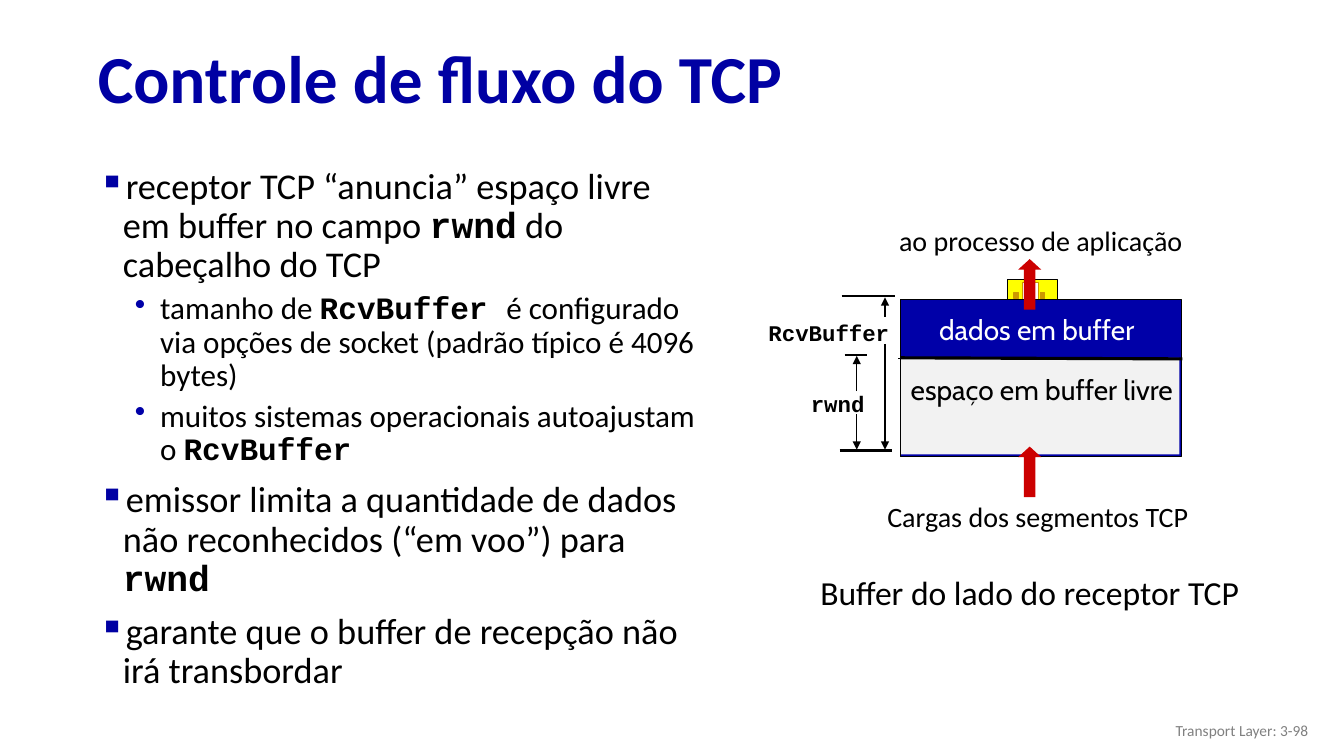
from dataclasses import dataclass

from lxml import etree
from pptx import Presentation
from pptx.dml.color import RGBColor
from pptx.enum.shapes import MSO_CONNECTOR, MSO_SHAPE
from pptx.enum.text import MSO_ANCHOR, PP_ALIGN
from pptx.oxml.ns import qn
from pptx.util import Inches, Pt

RECT, UP_ARROW = MSO_SHAPE.RECTANGLE, MSO_SHAPE.UP_ARROW
STRAIGHT = MSO_CONNECTOR.STRAIGHT
LEFT, CENTER, RIGHT = PP_ALIGN.LEFT, PP_ALIGN.CENTER, PP_ALIGN.RIGHT
TOP, MIDDLE = MSO_ANCHOR.TOP, MSO_ANCHOR.MIDDLE

WIDTH, HEIGHT = Inches(13.33), Inches(7.5)


@dataclass(frozen=True)
class Theme:
    """Colours, fonts and type sizes of the slide."""
    navy: str = "0000A3"
    blue: str = "0000A8"
    black: str = "000000"
    white: str = "FFFFFF"
    pale: str = "F2F2F2"
    yellow: str = "FFFF00"
    gold: str = "CC9900"
    red: str = "CC0000"
    grey: str = "808080"
    sans: str = "Calibri"
    round: str = "Cabin"
    code: str = "Courier New"
    title: float = 48
    point: float = 25.9
    detail: float = 22.2
    caption: float = 24
    label: float = 20
    measure: float = 16
    footer: float = 11


THEME = Theme()
LEVELS = (
    {"size": THEME.point, "margin": 0.39, "indent": -0.24, "before": 10,
     "bullet": "▪", "color": THEME.navy},
    {"size": THEME.detail, "margin": 0.76, "indent": -0.25, "before": 5,
     "bullet": "•", "color": THEME.blue},
)
POINTS = (
    (0, ("receptor TCP “anuncia” espaço livre em buffer no campo ", "rwnd",
         " do cabeçalho do TCP")),
    (1, ("tamanho de ", "RcvBuffer ",
         "é configurado via opções de socket (padrão típico é 4096 bytes)")),
    (1, ("muitos sistemas operacionais autoajustam o ", "RcvBuffer")),
    (0, ("emissor limita a quantidade de dados não reconhecidos (“em voo”) para ",
         "rwnd")),
    (0, ("garante que o buffer de recepção não irá transbordar",)),
)


def across(share):
    """Return a length from a percentage of the slide's width."""
    return round(WIDTH * share / 100)


def down(share):
    """Return a length from a percentage of the slide's height."""
    return round(HEIGHT * share / 100)


def area(left, top, width, height):
    """Return a rectangle given in percentages as slide lengths."""
    return across(left), down(top), across(width), down(height)


def apply(target, values):
    """Set every attribute named in values."""
    for name, value in values.items():
        setattr(target, name, value)


def add_span(para, text, size, color=THEME.black, font=THEME.sans, bold=False):
    """Add a formatted run to a paragraph."""
    span = para.add_run()
    span.text = text
    apply(span.font, {"size": Pt(size), "name": font, "bold": bold})
    span.font.color.rgb = RGBColor.from_string(color)


def add_label(page, place, text, size, align=CENTER, anchor=TOP, wrap=False, **style):
    """Add a one-paragraph text box."""
    frame = page.shapes.add_textbox(*area(*place)).text_frame
    apply(frame, {"word_wrap": wrap, "vertical_anchor": anchor})
    para = frame.paragraphs[0]
    para.alignment = align
    add_span(para, text, size, **style)


def add_block(page, kind, place, fill, line=None):
    """Add a filled preset shape with an optional thin outline."""
    block = page.shapes.add_shape(kind, *area(*place))
    block.shadow.inherit = False
    block.fill.solid()
    block.fill.fore_color.rgb = RGBColor.from_string(fill)
    if line:
        block.line.color.rgb = RGBColor.from_string(line)
        block.line.width = Pt(0.75)
    else:
        block.line.fill.background()
    return block


def add_rule(page, start, end, width=0.75, arrow=False):
    """Add a black straight line, with an optional arrowhead at its end."""
    rule = page.shapes.add_connector(
        STRAIGHT, across(start[0]), down(start[1]), across(end[0]), down(end[1]))
    rule.line.color.rgb = RGBColor.from_string(THEME.black)
    rule.line.width = Pt(width)
    if arrow:
        etree.SubElement(rule.line._get_or_add_ln(), qn("a:tailEnd"), type="triangle")
    etree.SubElement(rule._element.spPr, qn("a:effectLst"))


def set_bullet(para, level):
    """Give a paragraph its bullet and hanging indent."""
    props = para._p.get_or_add_pPr()
    props.set("marL", str(Inches(level["margin"])))
    props.set("indent", str(Inches(level["indent"])))
    color = etree.SubElement(props, qn("a:buClr"))
    etree.SubElement(color, qn("a:srgbClr"), val=level["color"])
    etree.SubElement(props, qn("a:buChar"), char=level["bullet"])


def add_title(page, text):
    """Place and format the title placeholder."""
    title = page.shapes.title
    apply(title, dict(zip(("left", "top", "width", "height"),
                          area(6.53, 4.27, 93.4, 13.07))))
    apply(title.text_frame, {"word_wrap": True, "vertical_anchor": MIDDLE})
    para = title.text_frame.paragraphs[0]
    apply(para, {"alignment": LEFT, "line_spacing": 0.9})
    add_span(para, text, THEME.title, THEME.navy, bold=True)


def add_points(page, points):
    """Add the bulleted text, setting every second run as code."""
    frame = page.shapes.add_textbox(*area(5.48, 21.6, 47.78, 71.6)).text_frame
    frame.word_wrap = True
    for index, (depth, texts) in enumerate(points):
        para = frame.add_paragraph() if index else frame.paragraphs[0]
        level = LEVELS[depth]
        apply(para, {"level": depth, "line_spacing": 0.9,
                     "space_before": Pt(level["before"])})
        set_bullet(para, level)
        for order, text in enumerate(texts):
            is_code = order % 2 == 1
            add_span(para, text, level["size"], bold=is_code,
                     font=THEME.code if is_code else THEME.sans)


def add_buffer(page):
    """Draw the receive buffer with its process and data arrows."""
    add_block(page, RECT, (74.93, 36.93, 3.75, 3.07), THEME.yellow, THEME.black)
    add_block(page, RECT, (76.05, 37.33, 1.2, 2.27), THEME.white, THEME.gold)
    for left in (75.45, 77.4):
        add_block(page, RECT, (left, 38.67, 0.3, 0.8), THEME.gold, THEME.gold)
    add_block(page, RECT, (66.98, 39.6, 20.93, 20.8), THEME.blue, THEME.black)
    add_block(page, RECT, (67.05, 47.33, 20.7, 12.8), THEME.pale)
    for top in (34.27, 59.07):
        arrow = add_block(page, UP_ARROW, (75.75, top, 1.73, 6.67), THEME.red)
        arrow.adjustments[1] = 0.459
    add_rule(page, (66.83, 47.47), (87.98, 47.47))
    add_rule(page, (66.98, 47.33), (87.98, 47.47), 2.25)
    add_label(page, (68.78, 40.67, 16.73, 5.87), "dados em buffer", THEME.label,
              color=THEME.white, font=THEME.round)
    add_label(page, (66.98, 48.67, 21.08, 10.27), "espaço em buffer livre",
              THEME.label, wrap=True, font=THEME.round)


def add_measures(page):
    """Draw the dimension lines of the whole buffer and its free part."""
    for left, right, row in ((62.63, 66.6, 39.2), (62.85, 64.5, 46.93),
                             (62.48, 66.38, 59.6)):
        add_rule(page, (left, row), (right, row), 1.5)
    for column, start, end in ((63.75, 51.73, 47.07), (63.75, 54.8, 59.47),
                               (65.85, 41.87, 39.33), (65.85, 45.47, 59.47)):
        add_rule(page, (column, start), (column, end), arrow=True)
    for place, text, align in (((59.55, 50.93, 5.55, 4.93), "rwnd", CENTER),
                               ((56.4, 41.6, 10.5, 4.93), "RcvBuffer", RIGHT)):
        add_label(page, place, text, THEME.measure, align, font=THEME.code, bold=True)


def main():
    """Build and save the slide."""
    deck = Presentation()
    apply(deck, {"slide_width": WIDTH, "slide_height": HEIGHT})
    page = deck.slides.add_slide(deck.slide_layouts[5])
    add_title(page, "Controle de fluxo do TCP")
    add_points(page, POINTS)
    add_buffer(page)
    add_measures(page)
    add_label(page, (65.1, 65.47, 24.23, 5.33), "Cargas dos segmentos TCP", THEME.label)
    add_label(page, (66, 28.93, 22.88, 5.33), "ao processo de aplicação", THEME.label)
    add_label(page, (59.4, 74.93, 34.43, 6.67), "Buffer do lado do receptor TCP",
              THEME.caption)
    add_label(page, (75.6, 94, 22.5, 5.33), "Transport Layer: 3-98", THEME.footer,
              RIGHT, MIDDLE, True, color=THEME.grey)
    deck.save("out.pptx")


if __name__ == "__main__":
    main()
